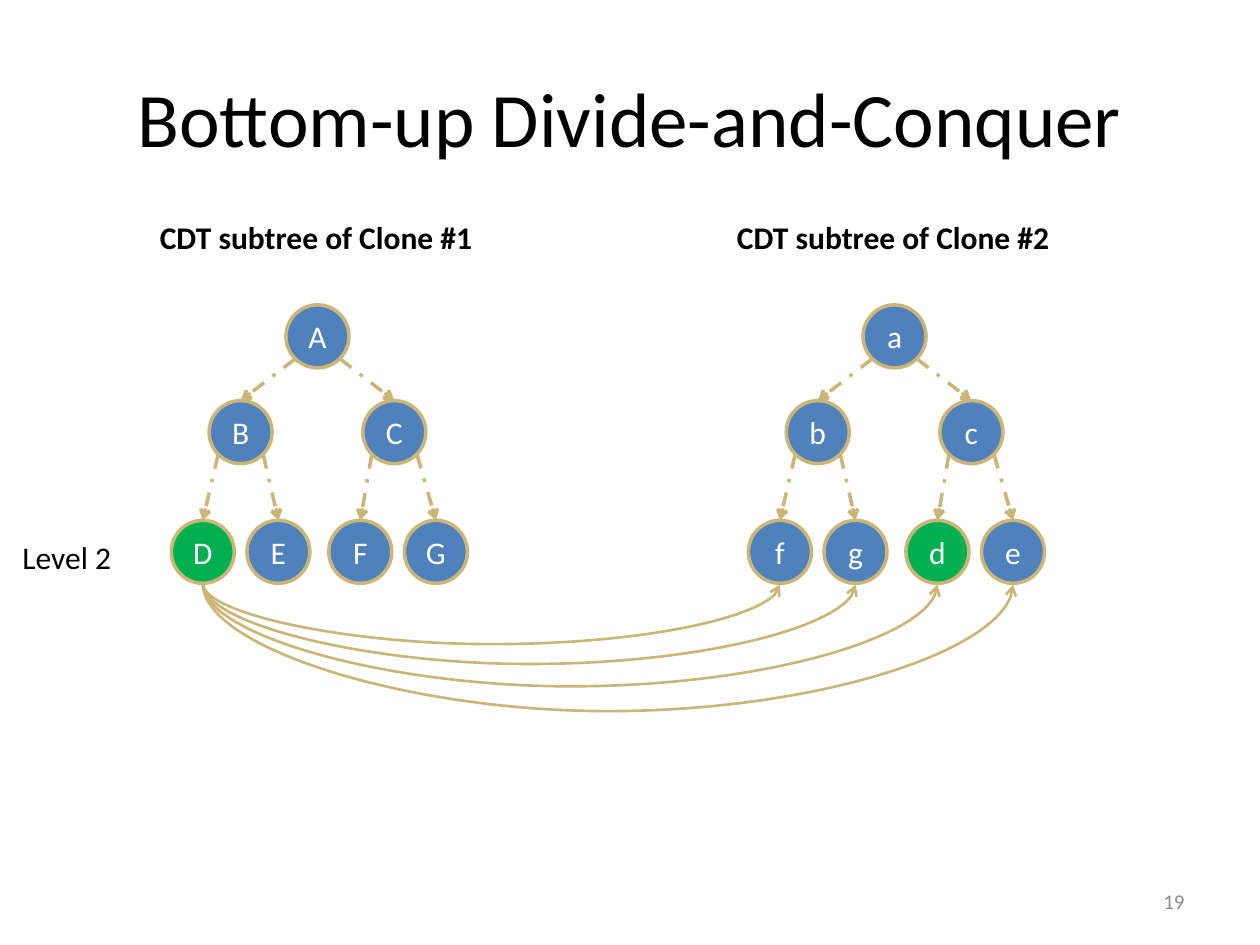
import pptx
import pptx.util
import pptx.dml.color
import pptx.enum.dml
import pptx.enum.shapes
import pptx.enum.text
import pptx.oxml
import pptx.oxml.ns

Inches, Pt = pptx.util.Inches, pptx.util.Pt
RGBColor = pptx.dml.color.RGBColor
Align = pptx.enum.text.PP_ALIGN
Anchor = pptx.enum.text.MSO_ANCHOR
Link = pptx.enum.shapes.MSO_CONNECTOR
qn = pptx.oxml.ns.qn

BLACK = RGBColor(0x00, 0x00, 0x00)
WHITE = RGBColor(0xFF, 0xFF, 0xFF)
BLUE = RGBColor(0x4F, 0x81, 0xBD)
GREEN = RGBColor(0x00, 0xB0, 0x50)
GOLD = RGBColor(0xCB, 0xB6, 0x77)
GRAY = RGBColor(0x8C, 0x8C, 0x8C)

SIZE = 0.5
INSET = 0.07
SPOTS = [(0.91, 0), (0.3, 0.76), (1.52, 0.76),
         (0, 1.71), (0.6, 1.71), (1.25, 1.71), (1.85, 1.71)]


def style(para, text, size, color, bold=False, align=Align.LEFT):
    """Fill a paragraph and set its font."""
    para.text = text
    para.alignment = align
    font = para.font
    font.name, font.size, font.bold = "Calibri", Pt(size), bold
    font.color.rgb = color


def label(slide, box, text, size, color, bold=False, align=Align.LEFT,
          anchor=Anchor.TOP, wrap=False):
    """Place a text box."""
    frame = slide.shapes.add_textbox(*map(Inches, box)).text_frame
    frame.word_wrap = wrap
    frame.vertical_anchor = anchor
    style(frame.paragraphs[0], text, size, color, bold, align)


def node(slide, x, y, text, fill):
    """Place one round tree node."""
    kind = pptx.enum.shapes.MSO_SHAPE.OVAL
    shape = slide.shapes.add_shape(kind, *map(Inches, (x, y, SIZE, SIZE)))
    shape.shadow.inherit = False
    shape.fill.solid()
    shape.fill.fore_color.rgb = fill
    shape.line.color.rgb = GOLD
    shape.line.width = Pt(2)
    frame = shape.text_frame
    frame.word_wrap = False
    frame.vertical_anchor = Anchor.MIDDLE
    style(frame.paragraphs[0], text, 18, WHITE, align=Align.CENTER)
    return shape


def arrow(slide, kind, ends, width):
    """Place a gold connector with an open arrowhead."""
    link = slide.shapes.add_connector(kind, *map(Inches, ends))
    link.line.color.rgb = GOLD
    link.line.width = Pt(width)
    props = link._element.spPr
    line = props.find(qn("a:ln"))
    line.append(line.makeelement(qn("a:tailEnd"), {"type": "arrow"}))
    props.append(props.makeelement(qn("a:effectLst"), {}))
    return link


def tree(slide, left, top, title, names, green):
    """Place a captioned binary tree of seven nodes."""
    label(slide, (left - 0.19, top - 0.74, 2.7, 0.4), title, 18, BLACK, True)
    nodes = [node(slide, left + x, top + y, name, GREEN if name == green else BLUE)
             for (x, y), name in zip(SPOTS, names)]
    for child in range(1, len(nodes)):
        x, y = SPOTS[(child - 1) // 2]
        side = INSET if child % 2 else SIZE - INSET
        end_x, end_y = SPOTS[child]
        link = arrow(slide, Link.STRAIGHT,
                     (left + x + side, top + y + SIZE - INSET,
                      left + end_x + SIZE / 2, top + end_y), 2)
        link.line.dash_style = pptx.enum.dml.MSO_LINE.DASH_DOT
        link.end_connect(nodes[child], 0)


def arc(slide, start, end, y, depth):
    """Place a curved arrow that hangs below two points on one level."""
    thin, span = 0.01, end - start
    left, top = (start + end - thin) / 2, y - (span - thin) / 2
    link = arrow(slide, Link.CURVE, (left, top, left + thin, top + span), 1.5)
    props = link._element.spPr
    frame = props.find(qn("a:xfrm"))
    frame.set("rot", "16200000")
    frame.set("flipH", "1")
    guides = props.find(qn("a:prstGeom")).get_or_add_avLst()
    value = round(depth / thin * 100000)
    guides.append(guides.makeelement(
        qn("a:gd"), {"name": "adj1", "fmla": f"val {value}"}))


def pairs(slide, first, second, top):
    """Join the first leaf of one tree to every leaf of the other."""
    y = top + SPOTS[3][1] + SIZE
    for (x, _), depth in zip(SPOTS[3:], (0.49, 0.65, 0.83, 1.03)):
        arc(slide, first + SIZE / 2, second + x + SIZE / 2, y, depth)


def main():
    """Build the slide."""
    deck = pptx.Presentation()
    deck.slide_width, deck.slide_height = Inches(10), Inches(7.5)
    slide = deck.slides.add_slide(deck.slide_layouts[6])
    first, second, top = 1.36, 5.94, 2.42
    label(slide, (0.5, 0.3, 9, 1.25), "Bottom-up Divide-and-Conquer", 44, BLACK,
          align=Align.CENTER, anchor=Anchor.MIDDLE, wrap=True)
    tree(slide, first, top, "CDT subtree of Clone #1", "ABCDEFG", "D")
    tree(slide, second, top, "CDT subtree of Clone #2", "abcfgde", "d")
    pairs(slide, first, second, top)
    label(slide, (0.08, 4.22, 0.92, 0.4), "Level 2", 18, BLACK)
    label(slide, (7.17, 6.95, 2.33, 0.4), "19", 12, GRAY,
          align=Align.RIGHT, anchor=Anchor.MIDDLE, wrap=True)
    deck.save("out.pptx")


if __name__ == "__main__":
    main()
